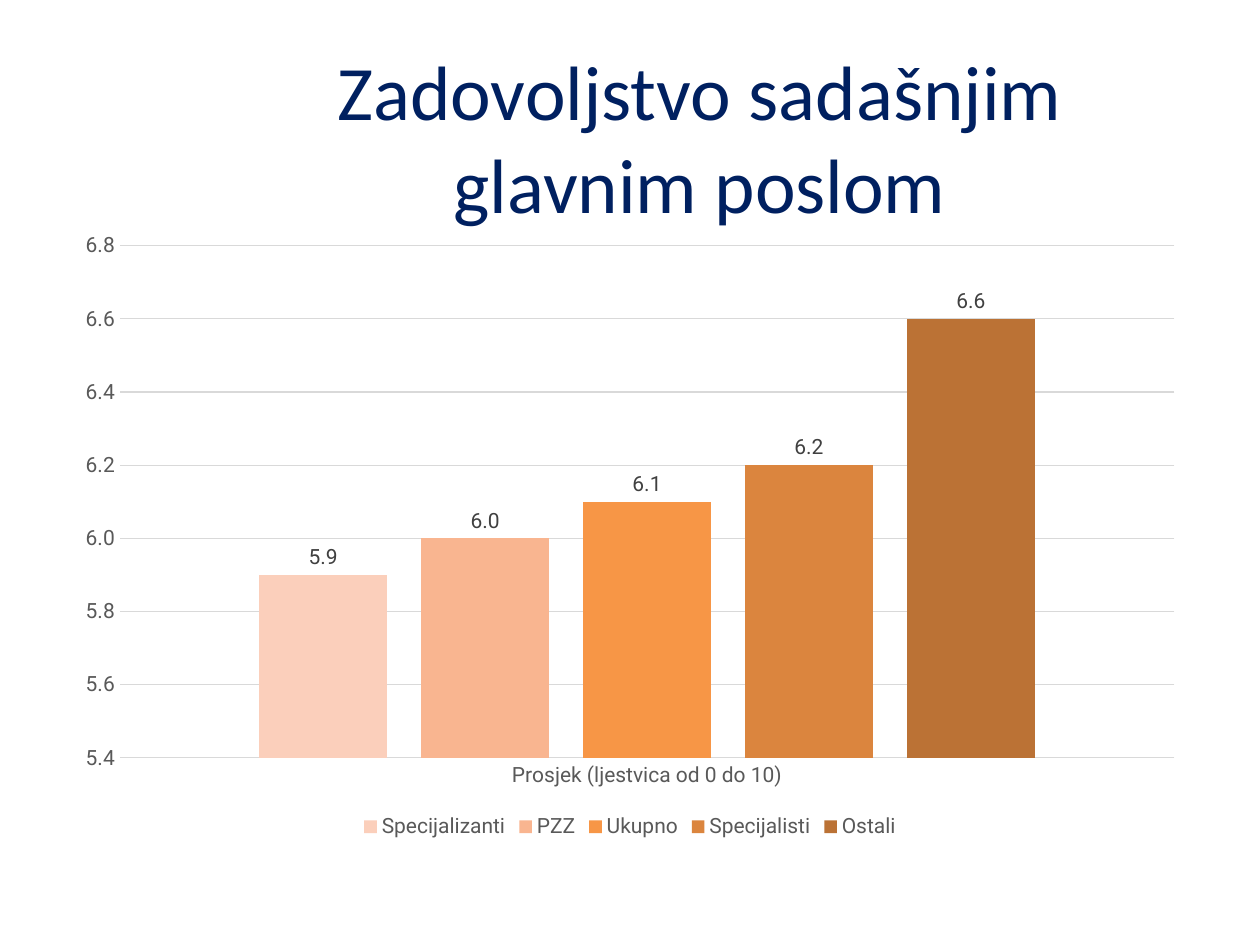
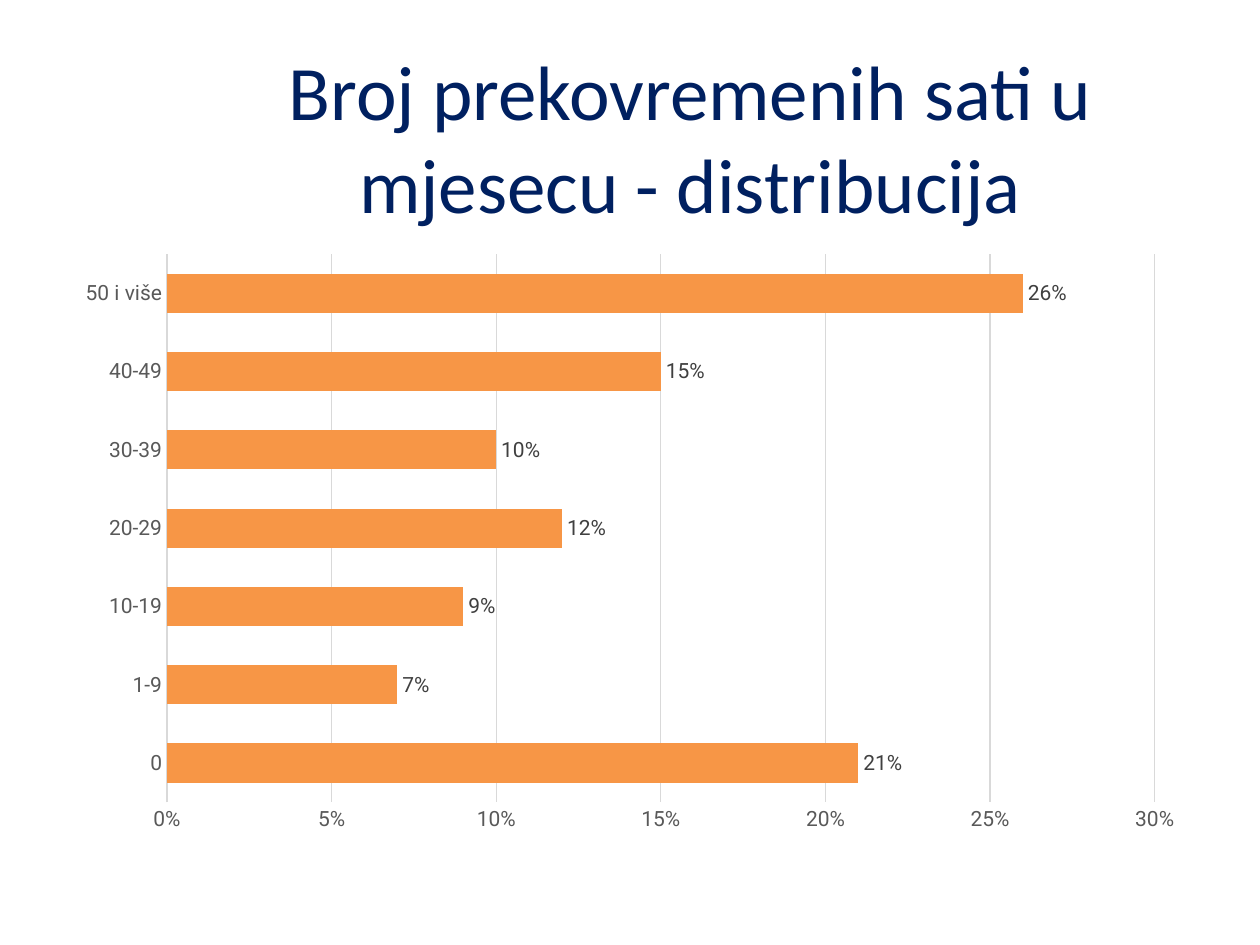
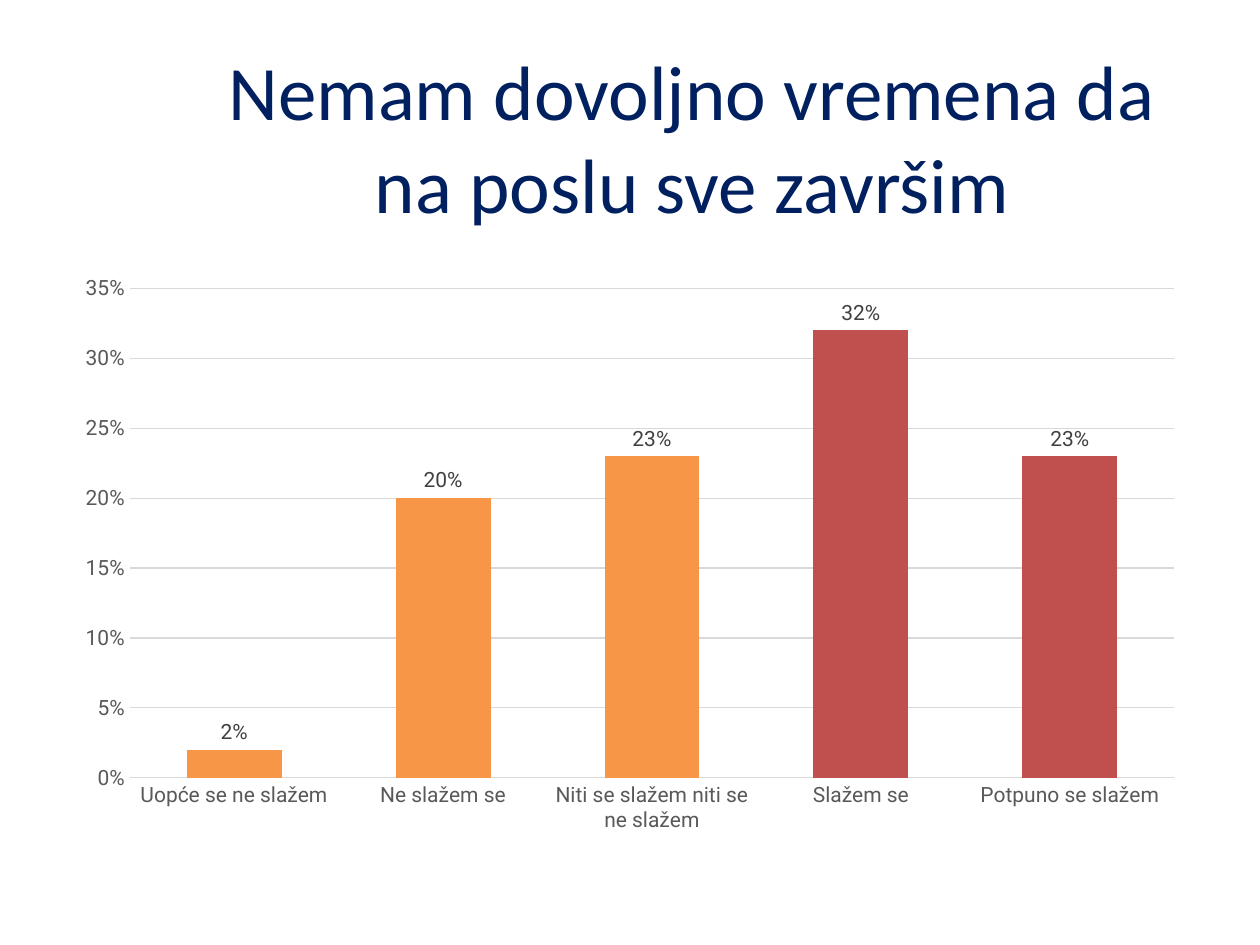
from dataclasses import dataclass

from pptx import Presentation
from pptx import util as u
from pptx.chart import data
from pptx.dml import color
from pptx.enum import chart as kinds
from pptx.enum import text


@dataclass(frozen=True)
class Theme:
    title_font: str = "Calibri"
    chart_font: str = "Roboto"
    title_size: int = 44
    chart_size: int = 12
    title: str = "002060"
    axis_text: str = "595959"
    label_text: str = "404040"
    grid: str = "D9D9D9"
    orange: str = "F79646"
    red: str = "C0504D"
    shades: tuple = ("FBCFBB", "F9B590", "F79646", "DB853E", "BB7235")


class Deck:
    right = 24.13
    chart_left = 1.27
    chart_bottom = 17.02

    def __init__(self, theme):
        self.theme = theme
        self.presentation = Presentation()
        self.presentation.slide_width = u.Cm(25.4)
        self.presentation.slide_height = u.Cm(19.05)
        self.slide = None

    def style_font(self, font, name, size, tint):
        font.name = name
        font.size = u.Pt(size)
        font.color.rgb = color.RGBColor.from_string(tint)

    def style_chart_font(self, font, tint):
        self.style_font(font, self.theme.chart_font, self.theme.chart_size, tint)

    def style_line(self, line):
        line.color.rgb = color.RGBColor.from_string(self.theme.grid)
        line.width = u.Pt(0.75)

    def fill(self, element, tint):
        element.format.fill.solid()
        element.format.fill.fore_color.rgb = color.RGBColor.from_string(tint)

    def add_slide(self, title, left):
        self.slide = self.presentation.slides.add_slide(self.presentation.slide_layouts[6])
        box = self.slide.shapes.add_textbox(
            u.Cm(left), u.Cm(0.76), u.Cm(self.right - left), u.Cm(3.7))
        frame = box.text_frame
        frame.word_wrap = True
        frame.vertical_anchor = text.MSO_ANCHOR.TOP
        frame.text = title
        paragraph = frame.paragraphs[0]
        paragraph.alignment = text.PP_ALIGN.CENTER
        for run in paragraph.runs:
            self.style_font(run.font, self.theme.title_font, self.theme.title_size, self.theme.title)

    def add_bars(self, kind, top, categories, series, number_format, scale, gap, overlap=0):
        chart_data = data.CategoryChartData(number_format=number_format)
        chart_data.categories = categories
        for name, values in series:
            chart_data.add_series(name, values)
        chart = self.slide.shapes.add_chart(
            kind, u.Cm(self.chart_left), u.Cm(top), u.Cm(self.right - self.chart_left),
            u.Cm(self.chart_bottom - top), chart_data).chart
        chart.has_title = False
        chart.has_legend = False
        self.style_chart_font(chart.font, self.theme.axis_text)
        self.style_axes(chart, number_format, scale)
        plot = chart.plots[0]
        plot.vary_by_categories = False
        plot.gap_width = gap
        plot.overlap = overlap
        for bars in plot.series:
            self.fill(bars, self.theme.orange)
            bars.invert_if_negative = False
            labels = bars.data_labels
            labels.show_value = True
            labels.position = kinds.XL_LABEL_POSITION.OUTSIDE_END
            labels.number_format = number_format
            labels.number_format_is_linked = False
            self.style_chart_font(labels.font, self.theme.label_text)
        return chart

    def style_axes(self, chart, number_format, scale):
        for axis in (chart.category_axis, chart.value_axis):
            axis.major_tick_mark = kinds.XL_TICK_MARK.NONE
            axis.minor_tick_mark = kinds.XL_TICK_MARK.NONE
            self.style_chart_font(axis.tick_labels.font, self.theme.axis_text)
        self.style_line(chart.category_axis.format.line)
        axis = chart.value_axis
        axis.minimum_scale, axis.maximum_scale, axis.major_unit = scale
        axis.format.line.fill.background()
        axis.has_major_gridlines = True
        self.style_line(axis.major_gridlines.format.line)
        axis.tick_labels.number_format = number_format
        axis.tick_labels.number_format_is_linked = False

    def add_legend(self, chart):
        chart.has_legend = True
        chart.legend.position = kinds.XL_LEGEND_POSITION.BOTTOM
        chart.legend.include_in_layout = False
        self.style_chart_font(chart.legend.font, self.theme.axis_text)


def add_satisfaction(deck):
    deck.add_slide("Zadovoljstvo sadašnjim glavnim poslom", 4.09)
    averages = [("Specijalizanti", [5.9]), ("PZZ", [6.0]), ("Ukupno", [6.1]),
                ("Specijalisti", [6.2]), ("Ostali", [6.6])]
    chart = deck.add_bars(
        kinds.XL_CHART_TYPE.COLUMN_CLUSTERED, 4.45, ["Prosjek (ljestvica od 0 do 10)"],
        averages, "0.0", (5.4, 6.8, 0.2), 219, -27)
    for bars, shade in zip(chart.plots[0].series, deck.theme.shades):
        deck.fill(bars, shade)
    deck.add_legend(chart)


def add_overtime(deck):
    deck.add_slide("Broj prekovremenih sati u mjesecu - distribucija", 3.71)
    hours = ["0", "1-9", "10-19", "20-29", "30-39", "40-49", "50 i više"]
    shares = [0.21, 0.07, 0.09, 0.12, 0.10, 0.15, 0.26]
    deck.add_bars(kinds.XL_CHART_TYPE.BAR_CLUSTERED, 4.88, hours,
                  [("Series 1", shares)], "0%", (0, 0.3, 0.05), 100)


def add_lack_of_time(deck):
    deck.add_slide("Nemam dovoljno vremena da na poslu sve završim", 3.78)
    answers = ["Uopće se ne slažem", "Ne slažem se", "Niti se slažem niti se ne slažem",
               "Slažem se", "Potpuno se slažem"]
    shares = [0.02, 0.20, 0.23, 0.32, 0.23]
    chart = deck.add_bars(kinds.XL_CHART_TYPE.COLUMN_CLUSTERED, 5.33, answers,
                          [("Series 1", shares)], "0%", (0, 0.35, 0.05), 120, -27)
    for agreeing in (3, 4):
        deck.fill(chart.plots[0].series[0].points[agreeing], deck.theme.red)


def main():
    deck = Deck(Theme())
    add_satisfaction(deck)
    add_overtime(deck)
    add_lack_of_time(deck)
    deck.presentation.save("out.pptx")


if __name__ == "__main__":
    main()
